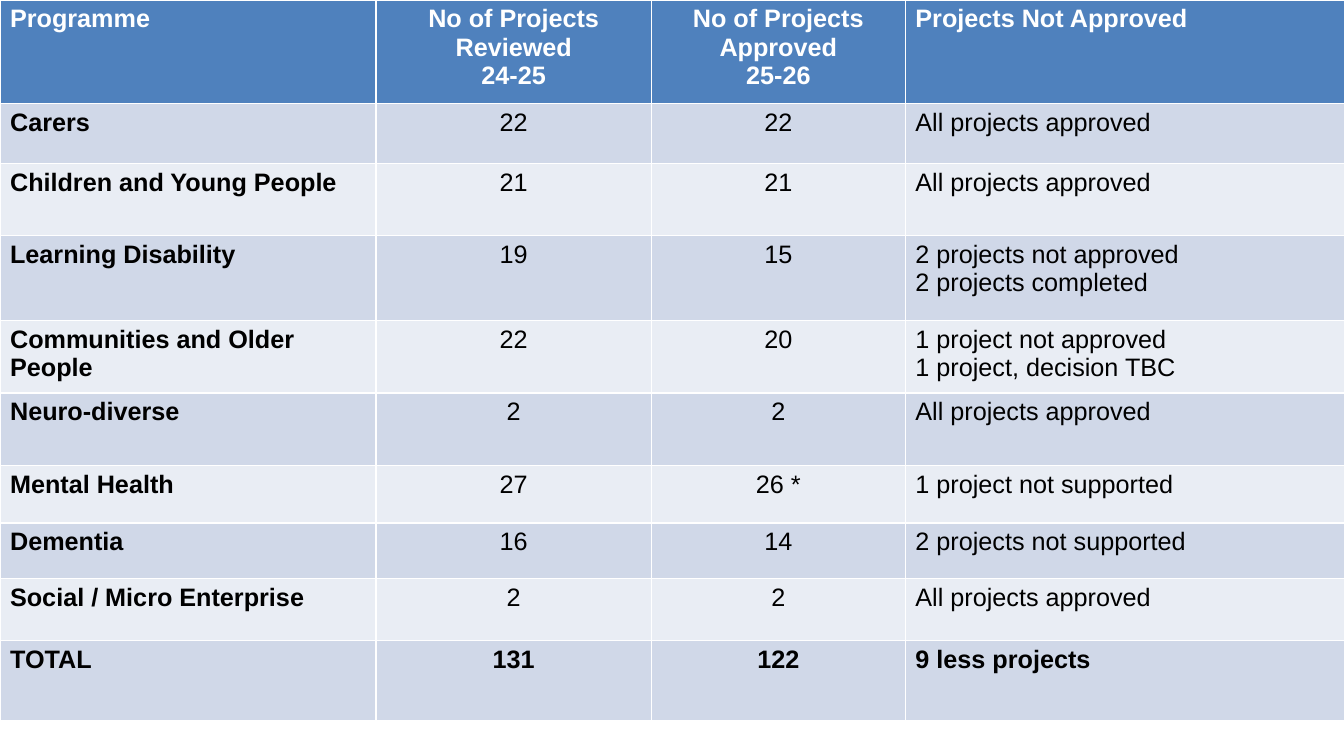
"""Build a slide with a table of reviewed and approved projects."""
from pptx import Presentation
from pptx.dml.color import RGBColor
from pptx.enum.text import PP_ALIGN as Align
from pptx.util import Inches, Pt

BLUE = RGBColor(0x4F, 0x81, 0xBD)
DARK = RGBColor(0xD0, 0xD8, 0xE8)
PALE = RGBColor(0xE9, 0xED, 0xF4)
WHITE = RGBColor(0xFF, 0xFF, 0xFF)
BLACK = RGBColor(0x00, 0x00, 0x00)

WIDTHS = [3.73, 2.73, 2.52, 4.36]
HEIGHTS = [1.03, 0.59, 0.72, 0.84, 0.72, 0.72, 0.57, 0.55, 0.62, 0.79]
ALL = "All projects approved"
ROWS = [
    ("Programme", "No of Projects Reviewed\n24-25", "No of Projects Approved\n25-26", "Projects Not Approved"),
    ("Carers", "22", "22", ALL),
    ("Children and Young People", "21", "21", ALL),
    ("Learning Disability", "19", "15", "2 projects not approved\n2 projects completed"),
    ("Communities and Older People", "22", "20", "1 project not approved\n1 project, decision TBC"),
    ("Neuro-diverse", "2", "2", ALL),
    ("Mental Health", "27", "26 *", "1 project not supported"),
    ("Dementia", "16", "14", "2 projects not supported"),
    ("Social / Micro Enterprise", "2", "2", ALL),
    ("TOTAL", "131", "122", "9 less projects"),
]

deck = Presentation()
deck.slide_width, deck.slide_height = Inches(13.33), Inches(7.5)
slide = deck.slides.add_slide(deck.slide_layouts[6])

frame = slide.shapes.add_table(
    len(ROWS), len(WIDTHS), 0, 0, deck.slide_width, Inches(sum(HEIGHTS)))
table = frame.table
for col, width in zip(table.columns, WIDTHS):
    col.width = Inches(width)
for row, height in zip(table.rows, HEIGHTS):
    row.height = Inches(height)

for r, texts in enumerate(ROWS):
    head, total = r == 0, r == len(ROWS) - 1
    for c, text in enumerate(texts):
        cell = table.cell(r, c)
        cell.fill.solid()
        cell.fill.fore_color.rgb = BLUE if head else DARK if r % 2 else PALE
        body = cell.text_frame
        for n, line in enumerate(text.split("\n")):
            para = body.add_paragraph() if n else body.paragraphs[0]
            para.alignment = Align.CENTER if c in (1, 2) else Align.LEFT
            run = para.add_run()
            run.text = line
            run.font.name = "Arial"
            run.font.size = Pt(18)
            run.font.bold = head or total or c == 0
            run.font.color.rgb = WHITE if head else BLACK

deck.save("out.pptx")
